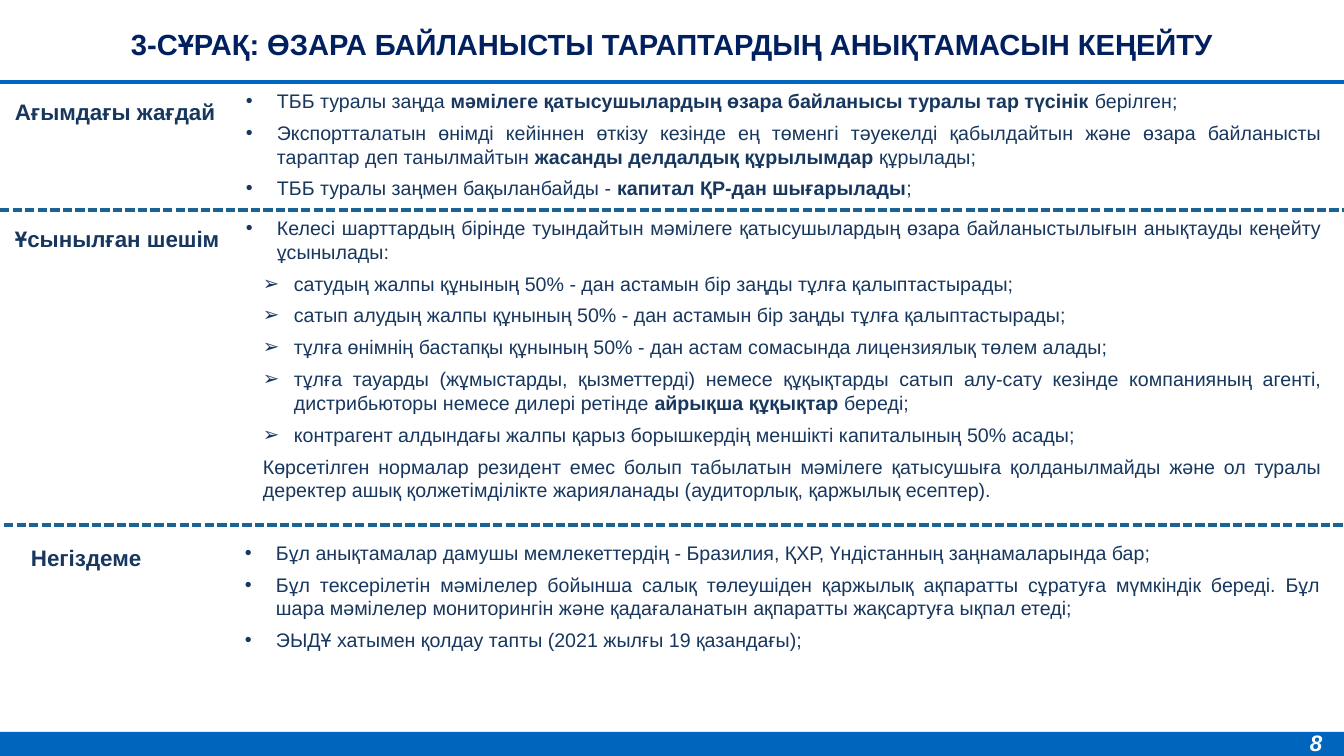
from lxml.etree import SubElement
from pptx import Presentation
from pptx.dml.color import RGBColor
from pptx.enum.dml import MSO_LINE
from pptx.enum.shapes import MSO_CONNECTOR, MSO_SHAPE
from pptx.enum.text import MSO_ANCHOR, PP_ALIGN
from pptx.oxml.ns import qn
from pptx.util import Pt

SCALE = 12192000 / 1344
WIDTH, HEIGHT = 1344, 756
COLORS = {
    "band": "0065BD",
    "title": "002060",
    "text": "17375E",
    "dash": "1D6294",
    "white": "FFFFFF",
}
LEVELS = {"•": (0, 31, -31), "➢": (1, 48, -31), "": (1, 17, 0)}

SECTIONS = [
    ("Ағымдағы жағдай", (5, 93, 269, 37), (236, 84, 1096, 122), [
        ("•", "ТББ туралы заңда **мәмілеге қатысушылардың өзара байланысы туралы тар түсінік **берілген;"),
        ("•", "Экспортталатын өнімді кейіннен өткізу кезінде ең төменгі тәуекелді қабылдайтын және өзара "
              "байланысты тараптар деп танылмайтын **жасанды делдалдық құрылымдар **құрылады;"),
        ("•", "ТББ туралы заңмен бақыланбайды - **капитал ҚР-дан шығарылады**;"),
    ]),
    ("Ұсынылған шешім", (5, 220, 229, 37), (236, 211, 1096, 298), [
        ("•", "Келесі шарттардың бірінде туындайтын мәмілеге қатысушылардың өзара байланыстылығын "
              "анықтауды кеңейту ұсынылады:"),
        ("➢", "сатудың жалпы құнының 50% - дан астамын бір заңды тұлға қалыптастырады;"),
        ("➢", "сатып алудың жалпы құнының 50% - дан астамын бір заңды тұлға қалыптастырады;"),
        ("➢", "тұлға өнімнің бастапқы құнының 50% - дан астам сомасында лицензиялық төлем алады;"),
        ("➢", "тұлға тауарды (жұмыстарды, қызметтерді) немесе құқықтарды сатып алу-сату кезінде "
              "компанияның агенті, дистрибьюторы немесе дилері ретінде **айрықша құқықтар **береді;"),
        ("➢", "контрагент алдындағы жалпы қарыз борышкердің меншікті капиталының 50% асады;"),
        ("", "Көрсетілген нормалар резидент емес болып табылатын мәмілеге қатысушыға қолданылмайды және "
             "ол туралы деректер ашық қолжетімділікте жарияланады (аудиторлық, қаржылық есептер)."),
    ]),
    ("Негіздеме", (21, 539, 198, 62), (235, 536, 1096, 122), [
        ("•", "Бұл анықтамалар дамушы мемлекеттердің - Бразилия, ҚХР, Үндістанның заңнамаларында бар;"),
        ("•", "Бұл тексерілетін мәмілелер бойынша салық төлеушіден қаржылық ақпаратты сұратуға мүмкіндік "
              "береді. Бұл шара мәмілелер мониторингін және қадағаланатын ақпаратты жақсартуға ықпал етеді;"),
        ("•", "ЭЫДҰ хатымен қолдау тапты (2021 жылғы 19 қазандағы);"),
    ]),
]


def px(n):
    return round(n * SCALE)


def rgb(name):
    return RGBColor.from_string(COLORS[name])


class Deck:
    font = "Arial"

    def __init__(self):
        self.prs = Presentation()
        self.prs.slide_width, self.prs.slide_height = px(WIDTH), px(HEIGHT)
        self.s = self.prs.slides.add_slide(self.prs.slide_layouts[6])

    def rect(self, box, color):
        sp = self.s.shapes.add_shape(MSO_SHAPE.RECTANGLE, *map(px, box))
        sp.shadow.inherit = False
        sp.fill.solid()
        sp.fill.fore_color.rgb = rgb(color)
        sp.line.fill.background()

    def rule(self, x, y, color, dash=None):
        cn = self.s.shapes.add_connector(MSO_CONNECTOR.STRAIGHT, px(x), px(y), px(WIDTH), px(y))
        cn.line.color.rgb = rgb(color)
        cn.line.width = Pt(2.25)
        if dash:
            cn.line.dash_style = dash
        SubElement(cn._element.spPr, qn("a:effectLst"))

    def frame(self, box):
        tf = self.s.shapes.add_textbox(*map(px, box)).text_frame
        tf.word_wrap = True
        return tf

    def style(self, r, size, color, bold=False, italic=False):
        f = r.font
        f.name, f.size, f.bold, f.italic = self.font, Pt(size), bold, italic
        f.color.rgb = rgb(color)

    def label(self, text, box, size=16, color="text", italic=False):
        tf = self.frame(box)
        tf.text = text
        self.style(tf.paragraphs[0].runs[0], size, color, True, italic)
        return tf

    def title(self, text, box):
        tf = self.label(text, box, 26, "title")
        tf.vertical_anchor = MSO_ANCHOR.MIDDLE
        p = tf.paragraphs[0]
        p.alignment = PP_ALIGN.CENTER
        p.runs[0].font._element.set("cap", "small")

    def body(self, items, box):
        tf = self.frame(box)
        for i, (bullet, text) in enumerate(items):
            p = tf.add_paragraph() if i else tf.paragraphs[0]
            self.paragraph(p, bullet, text)

    def paragraph(self, p, bullet, text):
        level, margin, indent = LEVELS[bullet]
        p.alignment = PP_ALIGN.JUSTIFY
        p.level = level
        p.space_before = Pt(6)
        pPr = p._p.get_or_add_pPr()
        pPr.set("marL", str(px(margin)))
        pPr.set("indent", str(px(indent)))
        if bullet:
            SubElement(pPr, qn("a:buFont"), typeface=self.font)
            SubElement(pPr, qn("a:buChar"), char=bullet)
        else:
            SubElement(pPr, qn("a:buNone"))
        for i, part in enumerate(text.split("**")):
            r = p.add_run()
            r.text = part
            self.style(r, 14, "text", bold=i % 2 == 1)


def main():
    deck = Deck()
    deck.rect((0, 732, WIDTH, 24), "band")
    deck.rule(0, 82, "band")
    deck.title("3-сұрақ: өзара байланысты тараптардың анықтамасын кеңейту", (13, 1, 1317, 80))
    for x, y in ((0, 210), (4, 525)):
        deck.rule(x, y, "dash", MSO_LINE.SQUARE_DOT)
    for heading, heading_box, body_box, items in SECTIONS:
        deck.label(heading, heading_box)
        deck.body(items, body_box)
    deck.label("8", (1300, 724, 44, 37), color="white", italic=True)
    deck.prs.save("out.pptx")


if __name__ == "__main__":
    main()
